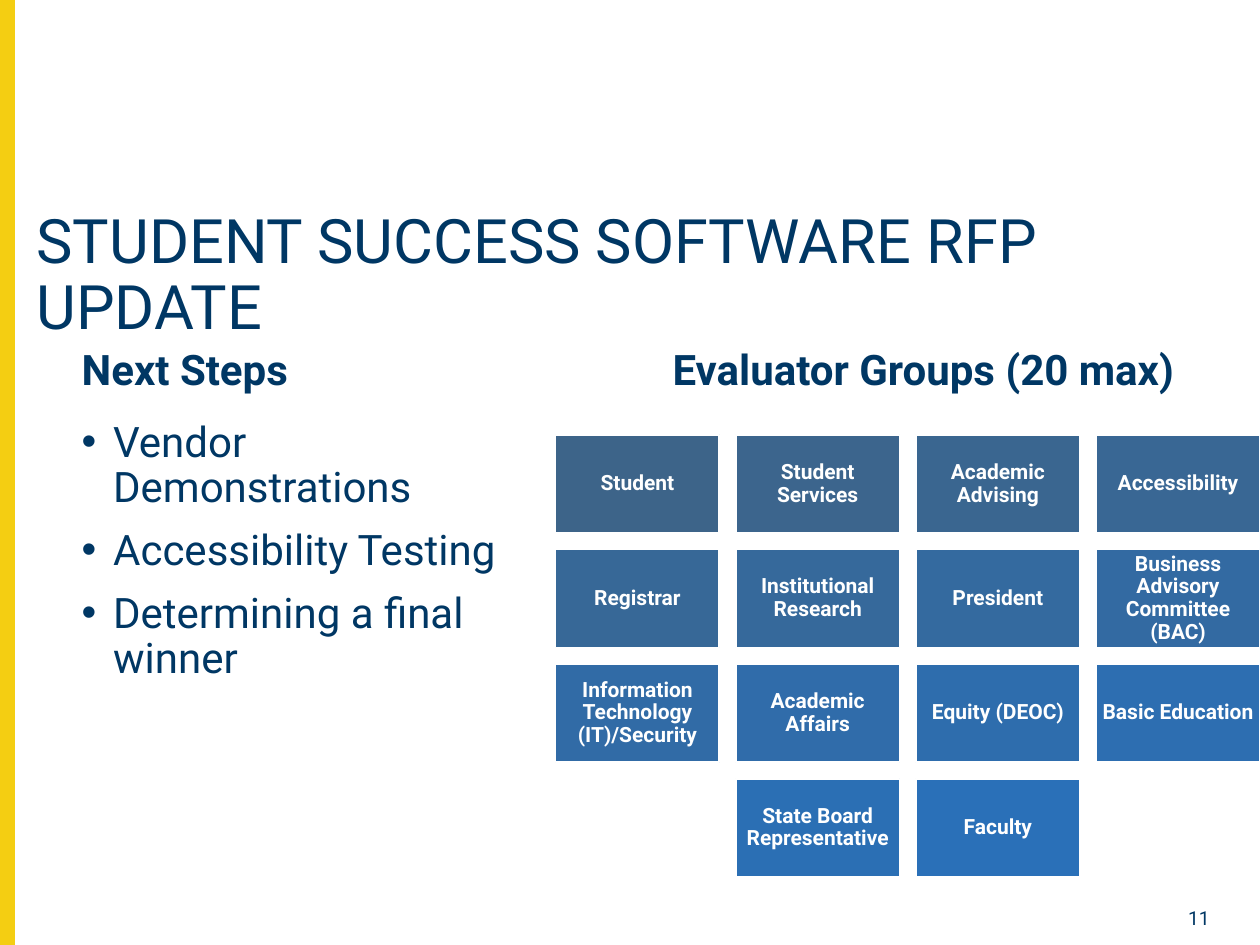
from dataclasses import dataclass

from lxml.etree import SubElement
from pptx import Presentation
from pptx.dml.color import RGBColor
from pptx.enum.shapes import MSO_SHAPE
from pptx.enum.text import MSO_ANCHOR, PP_ALIGN
from pptx.oxml.ns import qn
from pptx.util import Inches, Pt


@dataclass(frozen=True)
class Theme:
    font: str = "Roboto"
    navy: str = "003764"
    yellow: str = "F4CE12"
    white: str = "FFFFFF"
    first_tile: str = "3D6489"
    last_tile: str = "2A70B8"
    title_size: int = 35
    body_size: int = 24
    tile_size: int = 12
    number_size: int = 11


def blend(start, end, share):
    """Return the colour lying at the given share between two colours."""
    pairs = zip(RGBColor.from_string(start), RGBColor.from_string(end))
    return str(RGBColor(*(round(a + (b - a) * share) for a, b in pairs)))


class SlideBuilder:
    """Places elements on a grid of 100 columns by 75 rows."""

    UNIT = Inches(0.1)

    def __init__(self, slide, theme):
        self.slide = slide
        self.theme = theme

    def place(self, *lengths):
        return [round(length * self.UNIT) for length in lengths]

    def format_text(self, paragraph, size, color, bold=False):
        for run in paragraph.runs:
            run.font.name = self.theme.font
            run.font.size = Pt(size)
            run.font.bold = bold
            run.font.color.rgb = RGBColor.from_string(color)

    def add_bullet(self, paragraph):
        properties = paragraph._p.get_or_add_pPr()
        properties.set("marL", str(Inches(0.25)))
        properties.set("indent", str(-Inches(0.25)))
        SubElement(properties, qn("a:buFont"), typeface="Arial")
        SubElement(properties, qn("a:buChar"), char="•")

    def text(self, area, lines, size, bold=False, bullets=False, spacing=0.9,
             align=PP_ALIGN.LEFT, anchor=MSO_ANCHOR.TOP):
        frame = self.slide.shapes.add_textbox(*self.place(*area)).text_frame
        frame.word_wrap = True
        frame.vertical_anchor = anchor
        frame.text = "\n".join(lines)
        for index, paragraph in enumerate(frame.paragraphs):
            if bullets:
                self.add_bullet(paragraph)
            paragraph.alignment = align
            paragraph.line_spacing = spacing
            if index:
                paragraph.space_before = Pt(10)
            self.format_text(paragraph, size, self.theme.navy, bold)

    def rectangle(self, area, fill, line):
        shape = self.slide.shapes.add_shape(MSO_SHAPE.RECTANGLE, *self.place(*area))
        shape.shadow.inherit = False
        shape.fill.solid()
        shape.fill.fore_color.rgb = RGBColor.from_string(fill)
        shape.line.color.rgb = RGBColor.from_string(line)
        shape.line.width = Pt(1)
        return shape

    def tile(self, area, label, fill):
        frame = self.rectangle(area, fill, self.theme.white).text_frame
        frame.margin_left = frame.margin_right = Inches(0.05)
        frame.margin_top = frame.margin_bottom = Inches(0.05)
        frame.word_wrap = True
        frame.vertical_anchor = MSO_ANCHOR.MIDDLE
        frame.text = label
        paragraph = frame.paragraphs[0]
        paragraph.alignment = PP_ALIGN.CENTER
        paragraph.line_spacing = 0.9
        self.format_text(paragraph, self.theme.tile_size, self.theme.white, bold=True)

    def tile_grid(self, left, top, width, height, gap, rows):
        """Draw rows of tiles, centring short rows and shading first to last."""
        columns = max(len(row) for row in rows)
        last = sum(len(row) for row in rows) - 1
        count = 0
        for row_index, row in enumerate(rows):
            offset = (columns - len(row)) / 2
            for column_index, label in enumerate(row):
                x = left + (column_index + offset) * (width + gap)
                y = top + row_index * (height + gap)
                fill = blend(self.theme.first_tile, self.theme.last_tile, count / last)
                self.tile((x, y, width, height), label, fill)
                count += 1


EVALUATOR_GROUPS = [
    ["Student", "Student Services", "Academic Advising", "Accessibility"],
    ["Registrar", "Institutional Research", "President",
     "Business Advisory Committee (BAC)"],
    ["Information Technology (IT)/Security", "Academic Affairs",
     "Equity (DEOC)", "Basic Education"],
    ["State Board Representative", "Faculty"],
]
NEXT_STEPS = ["Vendor Demonstrations", "Accessibility Testing",
              "Determining a final winner"]


def main():
    presentation = Presentation()
    presentation.slide_width, presentation.slide_height = Inches(10), Inches(7.5)
    theme = Theme()
    slide = presentation.slides.add_slide(presentation.slide_layouts[6])
    builder = SlideBuilder(slide, theme)

    # Side band and title
    builder.rectangle((0, 0, 1.1, 75), theme.yellow, theme.yellow)
    builder.text((1.9, 16.2, 94.8, 8.1), ["STUDENT SUCCESS SOFTWARE RFP UPDATE"],
                 theme.title_size)

    # Column headings
    for left, width, heading in [(5.5, 43.8, "Next Steps"),
                                 (52.4, 44.3, "Evaluator Groups (20 max)")]:
        builder.text((left, 26.1, width, 5.7), [heading], theme.body_size,
                     bold=True, anchor=MSO_ANCHOR.BOTTOM)

    # Next steps list
    builder.text((5.5, 32.9, 38.6, 36.2), NEXT_STEPS, theme.body_size, bullets=True)

    # Evaluator groups
    builder.tile_grid(44.1, 34.5, 13, 7.8, 1.3, EVALUATOR_GROUPS)

    # Slide number
    builder.text((92, 71.4, 5, 2.1), ["11"], theme.number_size, spacing=1.0,
                 align=PP_ALIGN.RIGHT)

    presentation.save("out.pptx")


if __name__ == "__main__":
    main()
